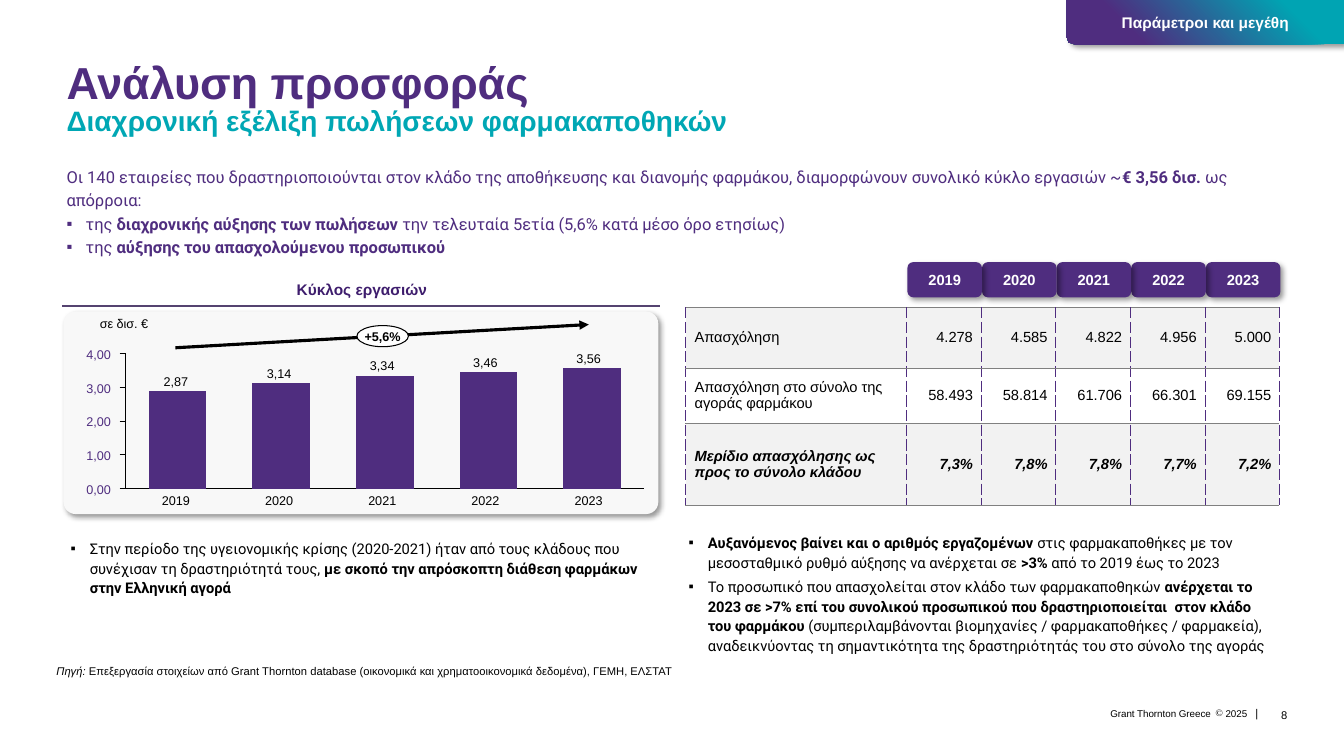
from dataclasses import dataclass
from lxml.etree import SubElement
from pptx import Presentation
from pptx.chart.data import CategoryChartData
from pptx.dml.color import RGBColor
from pptx.enum.chart import XL_CHART_TYPE, XL_TICK_LABEL_POSITION, XL_TICK_MARK
from pptx.enum.shapes import MSO_CONNECTOR, MSO_SHAPE
from pptx.enum.text import MSO_ANCHOR, MSO_AUTO_SIZE, PP_ALIGN
from pptx.oxml import parse_xml
from pptx.oxml.ns import nsdecls, qn
from pptx.util import Inches, Pt

LEFT, MID, RIGHT = PP_ALIGN.LEFT, PP_ALIGN.CENTER, PP_ALIGN.RIGHT
TOP, CENTRE, BASE = MSO_ANCHOR.TOP, MSO_ANCHOR.MIDDLE, MSO_ANCHOR.BOTTOM


@dataclass(frozen=True)
class Theme:
    """Colours, fonts and type sizes of the deck."""
    purple: str = "4F2D7F"
    plum: str = "3E1D6D"
    rule: str = "554370"
    teal: str = "00A7B4"
    aqua: str = "00A4B3"
    black: str = "000000"
    white: str = "FFFFFF"
    card: str = "F8F8F8"
    band: str = "F2F2F2"
    grey: str = "808080"
    sans: str = "Arial"
    text: str = "Roboto"
    title: float = 32
    sub: float = 20
    intro: float = 11.8
    head: float = 11
    body: float = 10.5
    label: float = 9
    note: float = 8
    tiny: float = 7


def tint(code):
    """Return a colour from its hex code."""
    return RGBColor.from_string(code)


class Page:
    """Draws styled elements on one slide."""

    def __init__(self, slide, theme):
        """Keep the slide and its theme."""
        self.slide, self.theme = slide, theme
        self.shapes = slide.shapes

    def pour(self, frame, lines, size, color=None, font=None, bold=False, align=LEFT,
             anchor=TOP, inset=(0, 0, 0, 0), wrap=True, space=1.0, after=0, slant=False):
        """Fill a text frame; stars mark emphasis and a leading ▪ or © a bullet."""
        frame.auto_size = MSO_AUTO_SIZE.NONE
        frame.word_wrap, frame.vertical_anchor = wrap, anchor
        (frame.margin_left, frame.margin_top,
         frame.margin_right, frame.margin_bottom) = map(Inches, inset)
        for i, line in enumerate(lines):
            para = frame.add_paragraph() if i else frame.paragraphs[0]
            para.alignment, para.line_spacing = align, space
            para.space_before, para.space_after = Pt(0), Pt(after)
            props = para._p.get_or_add_pPr()
            sign = line[0] if line[0] in "▪©" else ""
            hang = Inches({"▪": 0.19, "©": 0.1}.get(sign, 0))
            props.set("marL", str(hang))
            props.set("indent", str(-hang))
            if sign:
                SubElement(props, qn("a:buChar")).set("char", sign)
            else:
                SubElement(props, qn("a:buNone"))
            para.font.size, para.font.name = Pt(size), font or self.theme.sans
            para.font.color.rgb = tint(color or self.theme.black)
            parts = line[len(sign):].split("*")
            if len(parts) == 1:
                para.font.bold, para.font.italic = bold, slant
            for k, part in enumerate(parts):
                if part:
                    run = para.add_run()
                    run.text = part
                    if len(parts) > 1 and slant:
                        run.font.italic = k % 2 == 1
                    elif len(parts) > 1:
                        run.font.bold = k % 2 == 1

    def holder(self, index, at, lines, size, **style):
        """Move and fill a placeholder."""
        shape = self.slide.placeholders[index]
        shape.left, shape.top, shape.width, shape.height = map(Inches, at)
        self.pour(shape.text_frame, lines, size, **style)
        return shape

    def label(self, at, text, size, **style):
        """Add a one-line text box."""
        box = self.shapes.add_textbox(*map(Inches, at))
        self.pour(box.text_frame, [text], size, wrap=False, **style)

    def shade(self, shape):
        """Give a shape a soft shadow and no outline."""
        shape.line.fill.background()
        shape.shadow.inherit = False
        shape._element.spPr.find(qn("a:effectLst")).append(parse_xml(
            f'<a:outerShdw {nsdecls("a")} blurRad="50800" dist="38100" dir="2700000" algn="tl">'
            '<a:srgbClr val="000000"><a:alpha val="40000"/></a:srgbClr></a:outerShdw>'))

    def panel(self, at, fill, kind=MSO_SHAPE.ROUNDED_RECTANGLE):
        """Add a filled shape."""
        shape = self.shapes.add_shape(kind, *map(Inches, at))
        shape.shadow.inherit = False
        shape.fill.solid()
        shape.fill.fore_color.rgb = tint(fill)
        return shape

    def tab(self, points, text):
        """Add the graded corner tab."""
        spots = [(Inches(x), Inches(y)) for x, y in points]
        outline = self.shapes.build_freeform(*spots[0])
        outline.add_line_segments(spots[1:])
        shape = outline.convert_to_shape()
        self.shade(shape)
        shape.fill.gradient()
        shape.fill.gradient_angle = 225
        ends = ((0.19, self.theme.aqua), (0.76, self.theme.purple))
        for stop, (spot, color) in zip(shape.fill.gradient_stops, ends):
            stop.position, stop.color.rgb = spot, tint(color)
        self.pour(shape.text_frame, [text], self.theme.head, color=self.theme.white,
                  bold=True, align=MID, anchor=CENTRE)

    def line(self, start, end, color, width, arrow=False):
        """Add a straight line or arrow."""
        link = self.shapes.add_connector(MSO_CONNECTOR.STRAIGHT, *map(Inches, start + end))
        link.line.color.rgb, link.line.width = tint(color), Pt(width)
        if arrow:
            SubElement(link.line._get_or_add_ln(), qn("a:tailEnd")).set("type", "triangle")
        SubElement(link._element.spPr, qn("a:effectLst"))

    def chart(self, at, names, values, peak, step, plot):
        """Add the column chart with bare axes."""
        data = CategoryChartData()
        data.categories = names
        data.add_series("Series 1", values)
        chart = self.shapes.add_chart(
            XL_CHART_TYPE.COLUMN_STACKED, *map(Inches, at), data).chart
        chart.has_legend = chart.has_title = False
        chart.font.size, chart.font.name = Pt(self.theme.label), self.theme.sans
        chart.font.color.rgb = tint(self.theme.black)
        bars = chart.plots[0]
        bars.gap_width, bars.overlap, bars.vary_by_categories = 80, 100, False
        bars.series[0].format.fill.solid()
        bars.series[0].format.fill.fore_color.rgb = tint(self.theme.purple)
        for axis in (chart.category_axis, chart.value_axis):
            axis.has_major_gridlines = False
            axis.tick_label_position = XL_TICK_LABEL_POSITION.NONE
            axis.major_tick_mark = axis.minor_tick_mark = XL_TICK_MARK.NONE
            axis.format.line.color.rgb = tint(self.theme.black)
            axis.format.line.width = Pt(0.75)
        axis.major_tick_mark = XL_TICK_MARK.OUTSIDE
        axis.minimum_scale, axis.maximum_scale, axis.major_unit = 0, peak, step
        area = chart._chartSpace.chart.plotArea
        for old in area.findall(qn("c:layout")):
            area.remove(old)
        sizes = "".join(f'<c:{k} val="{v}"/>' for k, v in zip("xywh", plot))
        area.insert(0, parse_xml(
            f'<c:layout {nsdecls("c")}><c:manualLayout><c:layoutTarget val="inner"/>'
            f'<c:xMode val="edge"/><c:yMode val="edge"/>{sizes}</c:manualLayout></c:layout>'))

    def table(self, at, rows, widths, heights):
        """Add the ruled table of figures."""
        table = self.shapes.add_table(len(rows), len(widths), *map(Inches, at)).table
        table.first_row = table.horz_banding = False
        for col, width in zip(table.columns, widths):
            col.width = Inches(width)
        for r, (row, height) in enumerate(zip(rows, heights)):
            table.rows[r].height = Inches(height)
            for c, text in enumerate(row):
                cell = table.cell(r, c)
                cell.fill.solid()
                cell.fill.fore_color.rgb = tint(self.theme.white if r == 1 else self.theme.band)
                self.pour(cell.text_frame, [text], self.theme.body, bold=r == 2,
                          slant=r == 2, align=RIGHT if c else LEFT)
                cell.vertical_anchor = CENTRE
                cell.margin_left, cell.margin_right = Inches(0 if c else 0.09), Inches(0.08 if c else 0.01)
                cell.margin_top = cell.margin_bottom = 0
                for k, side in enumerate("LRTB"):
                    color, width, dash = ((self.theme.purple, 0.25, "sysDash") if side in "LR"
                                          else (self.theme.grey, 0.5, "solid"))
                    cell._tc.get_or_add_tcPr().insert(k, parse_xml(
                        f'<a:ln{side} {nsdecls("a")} w="{Pt(width)}"><a:solidFill><a:srgbClr '
                        f'val="{color}"/></a:solidFill><a:prstDash val="{dash}"/></a:ln{side}>'))


def main():
    """Build and save the slide."""
    deck = Presentation()
    deck.slide_width, deck.slide_height = Inches(13.33), Inches(7.5)
    theme = Theme()
    page = Page(deck.slides.add_slide(deck.slide_layouts[4]), theme)
    years = ["2019", "2020", "2021", "2022", "2023"]
    pad = (0.1, 0.05, 0.1, 0.05)

    title = page.holder(0, (0.56, 0.57, 12.2, 1.02), [
        "Ανάλυση προσφοράς", "Διαχρονική εξέλιξη πωλήσεων φαρμακαποθηκών"],
        theme.title, color=theme.purple, bold=True, inset=pad, space=0.85)
    sub = title.text_frame.paragraphs[1].font
    sub.size, sub.color.rgb = Pt(theme.sub), tint(theme.teal)
    page.holder(1, (0.56, 1.61, 11.97, 1.02), [
        "Οι 140 εταιρείες που δραστηριοποιούνται στον κλάδο της αποθήκευσης και διανομής φαρμάκου, "
        "διαμορφώνουν συνολικό κύκλο εργασιών ~*€ 3,56 δισ.* ως",
        "απόρροια:",
        "▪της *διαχρονικής αύξησης των πωλήσεων* την τελευταία 5ετία (5,6% κατά μέσο όρο ετησίως)",
        "▪της *αύξησης του απασχολούμενου προσωπικού*"],
        theme.intro, color=theme.purple, font=theme.text, inset=pad, after=2.4)
    page.holder(3, (0.63, 2.73, 5.92, 0.29), ["Κύκλος εργασιών"], theme.head,
                color=theme.plum, bold=True, align=MID, anchor=CENTRE)
    points = dict(font=theme.text, inset=(0.07, 0, 0.07, 0), space=1.13, after=3)
    page.holder(2, (0.63, 5.33, 5.9, 1.16), [
        "▪Στην περίοδο της υγειονομικής κρίσης (2020-2021) ήταν από τους κλάδους που συνέχισαν "
        "τη δραστηριότητά τους, *με σκοπό την απρόσκοπτη διάθεση φαρμάκων στην Ελληνική αγορά*"],
        theme.body, **points)
    page.holder(4, (6.76, 5.27, 5.9, 1.16), [
        "▪*Αυξανόμενος βαίνει και ο αριθμός εργαζομένων *στις φαρμακαποθήκες με τον μεσοσταθμικό "
        "ρυθμό αύξησης να ανέρχεται σε *>3% *από το 2019 έως το 2023",
        "▪To προσωπικό που απασχολείται στον κλάδο των φαρμακαποθηκών *ανέρχεται το 2023 σε >7% "
        "επί του συνολικού προσωπικού που δραστηριοποιείται  στον κλάδο του φαρμάκου "
        "*(συμπεριλαμβάνονται βιομηχανίες / φαρμακαποθήκες / φαρμακεία), αναδεικνύοντας τη "
        "σημαντικότητα της δραστηριότητάς του στο σύνολο της αγοράς"], theme.body, **points)

    page.tab([(10.58, 0), (13.33, 0), (13.33, 0.44), (10.66, 0.44), (10.6, 0.42), (10.58, 0.37)],
             "Παράμετροι και μεγέθη")
    card = page.panel((0.63, 3.09, 5.9, 2.01), theme.card)
    card.adjustments[0] = 0.06
    page.shade(card)
    page.line((0.62, 3.04), (6.55, 3.04), theme.rule, 1.5)

    values, peak = [81, 88, 94, 97, 100], 112
    page.chart((1.14, 3.42, 5.3, 1.52), ["1", "2", "3", "4", "5"], values, peak, 28,
               (0.02, 0.06, 0.97, 0.88))
    for i, mark in enumerate(["0,00", "1,00", "2,00", "3,00", "4,00"]):
        page.label((0.86, 4.78 - 0.335 * i, 0.24, 0.15), mark, theme.label,
                   color=theme.purple, align=RIGHT, anchor=CENTRE)
    page.line((1.74, 3.45), (5.84, 3.22), theme.black, 2.25, arrow=True)
    page.label((0.99, 3.13, 0.48, 0.15), "σε δισ. €", theme.label, align=MID, anchor=BASE)
    sales = ["2,87", "3,14", "3,34", "3,46", "3,56"]
    for i, (year, sale, value) in enumerate(zip(years, sales, values)):
        left = 1.6 + 1.023 * i
        page.label((left, 4.89, 0.29, 0.15), year, theme.label, align=MID)
        page.label((left, 4.68 - 1.34 * value / peak, 0.29, 0.15), sale, theme.label,
                   align=MID, anchor=BASE)
    growth = page.panel((3.54, 3.23, 0.51, 0.21), theme.white, MSO_SHAPE.OVAL)
    growth.line.color.rgb, growth.line.width = tint(theme.black), Pt(0.75)
    page.pour(growth.text_frame, ["+5,6%"], theme.label, bold=True, align=MID,
              anchor=CENTRE, wrap=False)

    page.table((6.8, 3.05, 5.89, 1.96), [
        ["Απασχόληση", "4.278", "4.585", "4.822", "4.956", "5.000"],
        ["Απασχόληση στο σύνολο της αγοράς φαρμάκου",
         "58.493", "58.814", "61.706", "66.301", "69.155"],
        ["Μερίδιο απασχόλησης ως προς το σύνολο κλάδου", "7,3%", "7,8%", "7,8%", "7,7%", "7,2%"]],
        [2.19] + [0.74] * 5, [0.6, 0.55, 0.81])
    for i, year in reversed(list(enumerate(years))):
        pill = page.panel((9 + 0.74 * i, 2.6, 0.74, 0.35), theme.purple)
        page.shade(pill)
        page.pour(pill.text_frame, [year], theme.body, color=theme.white, bold=True,
                  align=MID, anchor=CENTRE)

    page.label((0.56, 6.59, 6.3, 0.2),
               "*Πηγή: *Επεξεργασία στοιχείων από Grant Thornton database (οικονομικά και "
               "χρηματοοικονομικά δεδομένα), ΓΕΜΗ, ΕΛΣΤΑΤ", theme.note, slant=True)
    for at, text, size in [((8.71, 7.05, 3.3, 0.09), "Grant Thornton Greece", theme.tiny),
                           ((12.08, 7.04, 0.29, 0.1), "©2025", theme.tiny),
                           ((12.45, 7.01, 0.03, 0.13), "|", theme.note),
                           ((12.47, 7, 0.3, 0.16), "8", theme.note)]:
        page.label(at, text, size, align=RIGHT, anchor=BASE)
    deck.save("out.pptx")


if __name__ == "__main__":
    main()
